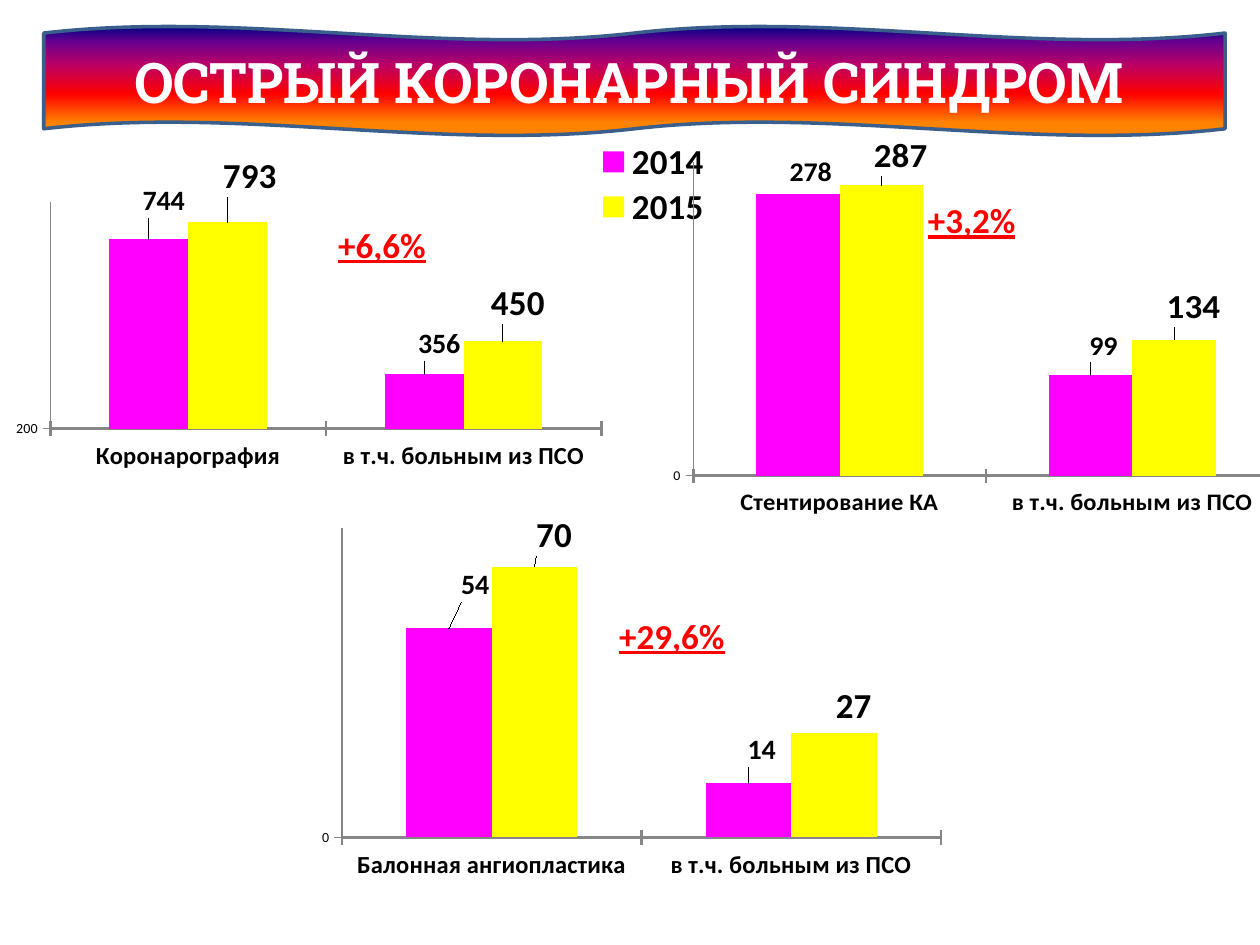
from lxml import etree
from pptx import Presentation
from pptx.chart.data import CategoryChartData
from pptx.dml.color import RGBColor
from pptx.enum import chart as ch, shapes, text
from pptx.oxml import ns
from pptx.util import Pt

COLORS = {
    "2014": "FF00FF",
    "2015": "FFFF00",
    "axis": "868686",
    "ink": "000000",
    "title": "FFFFFF",
    "growth": "FF0000",
    "banner_line": "3A5F8C",
}
BANNER_STOPS = [(0, "000082"), (14, "66008F"), (35, "BA0066"), (62, "FF0000"), (88, "FF8200")]
LABEL_SIZES = {"2014": 16, "2015": 20}
FROM_OTHER_HOSPITALS = "в т.ч. больным из ПСО"

# Label shifts are fractions of the chart's width and height, one per bar.
PROCEDURES = [
    {
        "name": "Коронарография", "frame": (-1, 77, 425.5, 227), "range": (200, 850),
        "plot": (0.07, 0.17, 0.74, 0.57), "legend": (0.8, 0.01, 0.16, 0.23),
        "values": {"2014": (744, 356), "2015": (793, 450)},
        "shifts": {"2014": [(0.02, -0.04), (0.02, -0.02)],
                   "2015": [(0.03, -0.05), (0.02, -0.03)]},
    },
    {
        "name": "Стентирование КА", "frame": (363, 77, 368.5, 233), "range": (0, 310),
        "plot": (0.09, 0.03, 0.91, 0.8), "legend": None,
        "values": {"2014": (278, 99), "2015": (287, 134)},
        "shifts": {"2014": [(0.02, 0), (0.02, -0.02)],
                   "2015": [(0.03, -0.01), (0.03, -0.02)]},
    },
    {
        "name": "Балонная ангиопластика", "frame": (161.5, 292.5, 377, 305), "range": (0, 80),
        "plot": (0.09, 0.03, 0.91, 0.58), "legend": None,
        "values": {"2014": (54, 14), "2015": (70, 27)},
        "shifts": {"2014": [(0.04, -0.04), (0.02, -0.02)],
                   "2015": [(0.03, -0.01), (0.03, 0)]},
    },
]
GROWTH = [
    ("+6,6%", (181.5, 125.5, 73.5, 28)),
    ("+3,2%", (518.5, 111.5, 73.5, 28)),
    ("+29,6%", (342.5, 349, 83, 28)),
]


def rgb(key):
    return RGBColor.from_string(COLORS[key])


def points(frame):
    return [Pt(length) for length in frame]


def style_font(font, size, bold=False, color="ink", face="Calibri"):
    font.size, font.bold, font.name = Pt(size), bold, face
    font.color.rgb = rgb(color)


def set_layout(parent, index, **settings):
    """Give a chart part a manual layout, placed at index among its children."""
    for old in parent.findall(ns.qn("c:layout")):
        parent.remove(old)
    layout = etree.Element(ns.qn("c:layout"))
    manual = etree.SubElement(layout, ns.qn("c:manualLayout"))
    for tag, value in settings.items():
        etree.SubElement(manual, ns.qn("c:" + tag)).set("val", str(value))
    parent.insert(index, layout)


def frame_settings(frame):
    return dict(xMode="edge", yMode="edge", **dict(zip("xywh", frame)))


def add_words(shape, words, size, color, face="Calibri", underline=None):
    """Write one bold centred line in the middle of a shape."""
    frame = shape.text_frame
    frame.word_wrap = True
    frame.vertical_anchor = text.MSO_ANCHOR.MIDDLE
    paragraph = frame.paragraphs[0]
    paragraph.alignment = text.PP_ALIGN.CENTER
    run = paragraph.add_run()
    run.text = words
    style_font(run.font, size, True, color, face)
    run.font.underline = underline


def add_banner(slide):
    banner = slide.shapes.add_shape(shapes.MSO_SHAPE.DOUBLE_WAVE, *points((25, 15, 675, 62.5)))
    banner.shadow.inherit = False
    banner.fill.gradient()
    banner.fill.gradient_angle = 270
    stops = banner._element.spPr.find(".//" + ns.qn("a:gsLst"))
    for stop in list(stops):
        stops.remove(stop)
    for percent, color in BANNER_STOPS:
        stop = etree.SubElement(stops, ns.qn("a:gs"), pos=str(percent * 1000))
        etree.SubElement(stop, ns.qn("a:srgbClr"), val=color)
    banner.line.color.rgb = rgb("banner_line")
    banner.line.width = Pt(2)
    add_words(banner, "ОСТРЫЙ КОРОНАРНЫЙ СИНДРОМ ", 32, "title", "Roboto Slab")


def add_growth(slide, words, frame):
    growth = slide.shapes.add_shape(shapes.MSO_SHAPE.ROUNDED_RECTANGLE, *points(frame))
    growth.shadow.inherit = False
    growth.fill.background()
    growth.line.fill.background()
    growth.text_frame.margin_left = growth.text_frame.margin_right = 0
    add_words(growth, words, 20, "growth", underline=True)


def style_axis(axis, size, bold, width):
    style_font(axis.tick_labels.font, size, bold)
    axis.major_tick_mark = ch.XL_TICK_MARK.CROSS
    axis.minor_tick_mark = ch.XL_TICK_MARK.NONE
    axis.format.line.color.rgb = rgb("axis")
    axis.format.line.width = Pt(width)


def style_series(series, shifts):
    series.smooth = False if hasattr(series, "smooth") else None
    series.format.fill.solid()
    series.format.fill.fore_color.rgb = rgb(series.name)
    size = LABEL_SIZES[series.name]
    labels = series.data_labels
    labels.show_value = True
    labels.position = ch.XL_LABEL_POSITION.OUTSIDE_END
    style_font(labels.font, size, True)
    for index, (x, y) in enumerate(shifts):
        label = series.points[index].data_label
        label.position = ch.XL_LABEL_POSITION.OUTSIDE_END
        style_font(label.font, size, True)
    for element, (x, y) in zip(series._element.iter(ns.qn("c:dLbl")), shifts):
        set_layout(element, 1, x=x, y=y)


def add_legend(chart, frame):
    chart.has_legend = True
    chart.legend.position = ch.XL_LEGEND_POSITION.TOP
    chart.legend.include_in_layout = False
    style_font(chart.legend.font, 20, True)
    set_layout(chart.legend._element, 1, **frame_settings(frame))


def add_procedure_chart(slide, procedure):
    data = CategoryChartData()
    data.categories = [procedure["name"], FROM_OTHER_HOSPITALS]
    for year, values in procedure["values"].items():
        data.add_series(year, values)
    chart = slide.shapes.add_chart(
        ch.XL_CHART_TYPE.COLUMN_CLUSTERED, *points(procedure["frame"]), data).chart
    chart.has_title = False
    chart.has_legend = False
    style_font(chart.font, 16)

    columns = chart.plots[0]
    columns.vary_by_categories = False
    columns.gap_width = 150
    columns.overlap = 0
    for series in columns.series:
        style_series(series, procedure["shifts"][series.name])

    style_axis(chart.category_axis, 14, True, 1.5)
    counts = chart.value_axis
    style_axis(counts, 8, False, 0.75)
    counts.minimum_scale, counts.maximum_scale = procedure["range"]
    counts.major_unit = 5000
    counts.has_major_gridlines = True
    counts.major_gridlines.format.line.color.rgb = rgb("axis")

    plot_area = chart._chartSpace.find(".//" + ns.qn("c:plotArea"))
    set_layout(plot_area, 0, layoutTarget="inner", **frame_settings(procedure["plot"]))
    if procedure["legend"]:
        add_legend(chart, procedure["legend"])


def main():
    deck = Presentation()
    deck.slide_width, deck.slide_height = Pt(720), Pt(540)
    slide = deck.slides.add_slide(deck.slide_layouts[6])
    add_banner(slide)
    for procedure in PROCEDURES:
        add_procedure_chart(slide, procedure)
    for words, frame in GROWTH:
        add_growth(slide, words, frame)
    deck.save("out.pptx")


if __name__ == "__main__":
    main()
